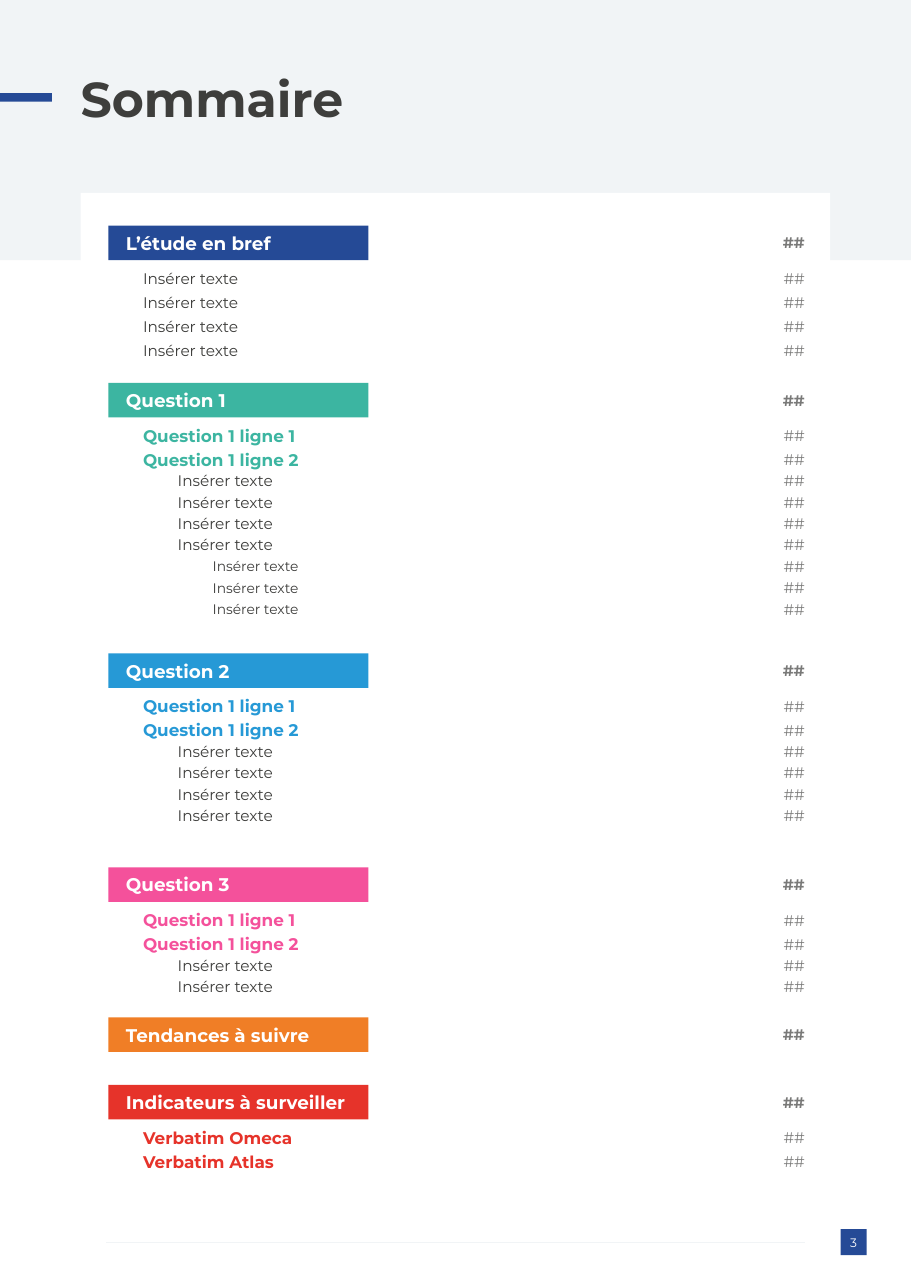
from lxml.etree import SubElement
from pptx import Presentation
from pptx.dml.color import RGBColor
from pptx.enum.shapes import MSO_CONNECTOR, MSO_SHAPE
from pptx.enum.text import MSO_ANCHOR, MSO_AUTO_SIZE, PP_ALIGN
from pptx.oxml.ns import qn
from pptx.util import Pt

BLUE, PALE, WHITE, DARK, GREY = "254A96", "F1F4F6", "FFFFFF", "3E3E3C", "797978"
LEFT, RIGHT = PP_ALIGN.LEFT, PP_ALIGN.RIGHT


def block(x, y, w, h, fill=None):
    """Add a filled rectangle, or a text box when there is no fill."""
    box = [Pt(v) for v in (x, y, w, h)]
    if fill is None:
        return slide.shapes.add_textbox(*box)
    shape = slide.shapes.add_shape(MSO_SHAPE.RECTANGLE, *box)
    shape.shadow.inherit = False
    shape.fill.solid()
    shape.fill.fore_color.rgb = RGBColor.from_string(fill)
    shape.line.fill.background()
    return shape


def write(shape, text, size, color, bold=False, align=LEFT, inset=0):
    frame = shape.text_frame
    frame.text = text
    frame.word_wrap = True
    frame.auto_size = MSO_AUTO_SIZE.NONE
    frame.vertical_anchor = MSO_ANCHOR.MIDDLE
    frame.margin_left = Pt(inset)
    frame.margin_top = frame.margin_right = frame.margin_bottom = 0
    para = frame.paragraphs[0]
    para.alignment = align
    font = para.runs[0].font
    font.name, font.size, font.bold = "Montserrat", Pt(size), bold
    font.color.rgb = RGBColor.from_string(color)


deck = Presentation()
deck.slide_width, deck.slide_height = Pt(595.44), Pt(841.68)
slide = deck.slides.add_slide(deck.slide_layouts[5])

# Page background
block(0, 0, 595.44, 170, PALE)
block(52.7, 126, 490, 85, WHITE)
block(0, 60.9, 34, 5.5, BLUE)

# Footer
page = block(549.5, 803.3, 17, 17, BLUE)
write(page, "3", 8, WHITE, align=PP_ALIGN.CENTER)
rule = slide.shapes.add_connector(
    MSO_CONNECTOR.STRAIGHT, Pt(69.4), Pt(812), Pt(526), Pt(812))
rule.line.color.rgb = RGBColor.from_string(PALE)
rule.line.width = Pt(0.5)
SubElement(rule.element.spPr, qn("a:effectLst"))

# Title, brought in front of the band
title = slide.shapes.title
title.left, title.top, title.width, title.height = Pt(52.7), Pt(44.8), Pt(490), Pt(39)
write(title, "Sommaire", 32, DARK, True)
slide.shapes.element.append(title.element)

# Row levels: left edge, text size, bold, step from the row above
levels = {
    "text": (93.5, 10, False, 15.75),
    "line": (93.5, 11, True, 15.75),
    "sub": (116.2, 10, False, 13.9),
    "detail": (139, 9, False, 14.1),
}
insert = "Insérer texte"
lines = [("line", "Question 1 ligne 1"), ("line", "Question 1 ligne 2")]

# Sections: heading, colour, middle of the heading, rows
sections = [
    ("L’étude en bref", BLUE, 158.7, [("text", insert)] * 4),
    ("Question 1", "3CB5A1", 261.5,
     lines + [("sub", insert)] * 4 + [("detail", insert)] * 3),
    ("Question 2", "2699D6", 438.3, lines + [("sub", insert)] * 4),
    ("Question 3", "F4519B", 578.1, lines + [("sub", insert)] * 2),
    ("Tendances à suivre", "F07E26", 676.2, []),
    ("Indicateurs à surveiller", "E6332A", 720.2,
     [("line", "Verbatim Omeca"), ("line", "Verbatim Atlas")]),
]

for head, color, mid, rows in sections:
    bar = block(70.8, mid - 11.3, 170, 22.6, color)
    write(bar, head, 12, WHITE, True, inset=11.5)
    write(block(497.5, mid - 6, 28.5, 12), "##", 10, GREY, True, RIGHT)
    for num, (level, text) in enumerate(rows):
        x, size, bold, step = levels[level]
        mid += step if num else 23.1
        high = size * 1.22
        label = block(x, mid - high / 2, 452 - x, high)
        write(label, text, size, color if bold else DARK, bold)
        write(block(497.5, mid - 6, 28.5, 12), "##", 10, GREY, align=RIGHT)

deck.save("out.pptx")
